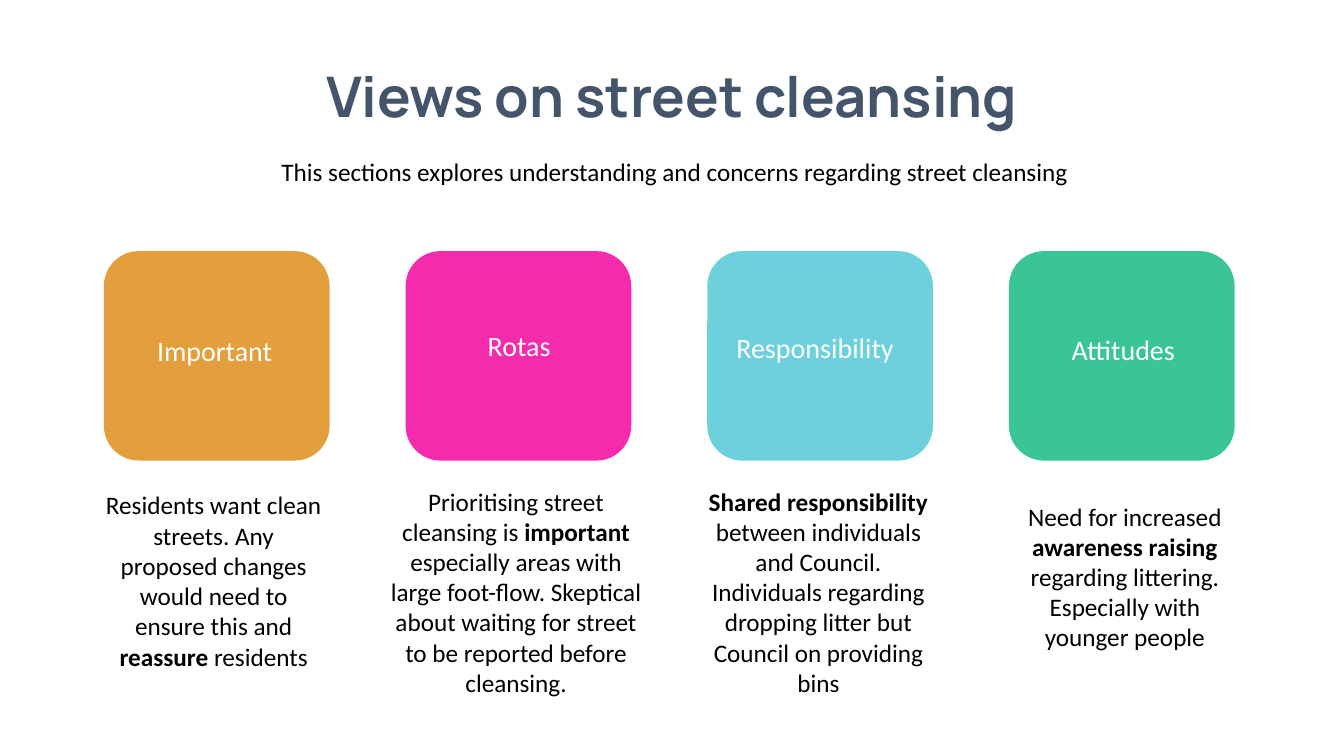
import pptx
import pptx.dml.color
import pptx.enum.shapes
import pptx.enum.text
import pptx.util

Pt = pptx.util.Pt


def colour(value):
    return pptx.dml.color.RGBColor.from_string(value)


class SlideBuilder:
    heading_font = "Manrope"
    body_font = "Calibri"
    heading_colour = "44546A"
    body_colour = "000000"
    label_colour = "FFFFFF"

    def __init__(self, page):
        self.page = page

    def card(self, left, top, width, height, fill):
        shape = self.page.shapes.add_shape(
            pptx.enum.shapes.MSO_SHAPE.ROUNDED_RECTANGLE,
            Pt(left), Pt(top), Pt(width), Pt(height))
        shape.shadow.inherit = False
        shape.fill.solid()
        shape.fill.fore_color.rgb = colour(fill)
        shape.line.fill.background()

    def text(self, left, top, width, height, spans, size, ink, font, wrap=True):
        box = self.page.shapes.add_textbox(Pt(left), Pt(top), Pt(width), Pt(height))
        frame = box.text_frame
        frame.word_wrap = wrap
        frame.auto_size = pptx.enum.text.MSO_AUTO_SIZE.SHAPE_TO_FIT_TEXT
        para = frame.paragraphs[0]
        para.alignment = pptx.enum.text.PP_ALIGN.CENTER
        para.font.name = font
        para.font.size = Pt(size)
        para.font.color.rgb = colour(ink)
        for words, bold in spans:
            span = para.add_run()
            span.text = words
            if bold:
                span.font.bold = True

    def title(self, words):
        self.text(208, 40.3, 544.3, 55.4, [(words, True)], 40,
                  self.heading_colour, self.heading_font, wrap=False)

    def label(self, left, top, width, words):
        self.text(left, top, width, 31.5, [(words, False)], 20,
                  self.label_colour, self.body_font)

    def body(self, left, top, width, height, spans):
        self.text(left, top, width, height, spans, 18,
                  self.body_colour, self.body_font)


CARD_LEFT, CARD_TOP, CARD_PITCH = 74.2, 179.4, 215.5
CARD_WIDTH, CARD_HEIGHT = 161.2, 149.6

THEMES = [
    ("E39F3B", "Important", (73.4, 234.7, 159.8), (68.4, 346.3, 168.5, 138.2),
     [("Residents want clean streets. Any proposed changes would need to ensure this and ", False),
      ("reassure", True), (" residents", False)]),
    ("F32BAC", "Rotas", (298.1, 231.1, 145.4), (270, 343.5, 197.3, 160),
     [("Prioritising street cleansing is ", False), ("important", True),
      (" especially areas with large foot-flow. Skeptical about waiting for street"
       " to be reported before cleansing.", False)]),
    ("6DD0DD", "Responsibility", (499, 232.6, 166.3), (493.2, 343.5, 182.9, 160),
     [("Shared responsibility ", True),
      ("between individuals and Council. Individuals regarding dropping litter"
       " but Council on providing bins", False)]),
    ("3AC694", "Attitudes", (717.8, 234, 169.2), (727.2, 354.2, 152.6, 138.2),
     [("Need for increased ", False), ("awareness raising ", True),
      ("regarding littering. Especially with younger people", False)]),
]


def main():
    deck = pptx.Presentation()
    deck.slide_width = Pt(960)
    deck.slide_height = Pt(540)
    builder = SlideBuilder(deck.slides.add_slide(deck.slide_layouts[6]))
    builder.title("Views on street cleansing")
    builder.body(105.1, 108, 753.8, 29, [
        ("This sections explores understanding and concerns regarding street cleansing", False)])
    for index, (fill, name, label_place, body_place, spans) in enumerate(THEMES):
        builder.card(CARD_LEFT + index * CARD_PITCH, CARD_TOP, CARD_WIDTH, CARD_HEIGHT, fill)
        builder.label(*label_place, name)
        builder.body(*body_place, spans)
    deck.save("out.pptx")


if __name__ == "__main__":
    main()
